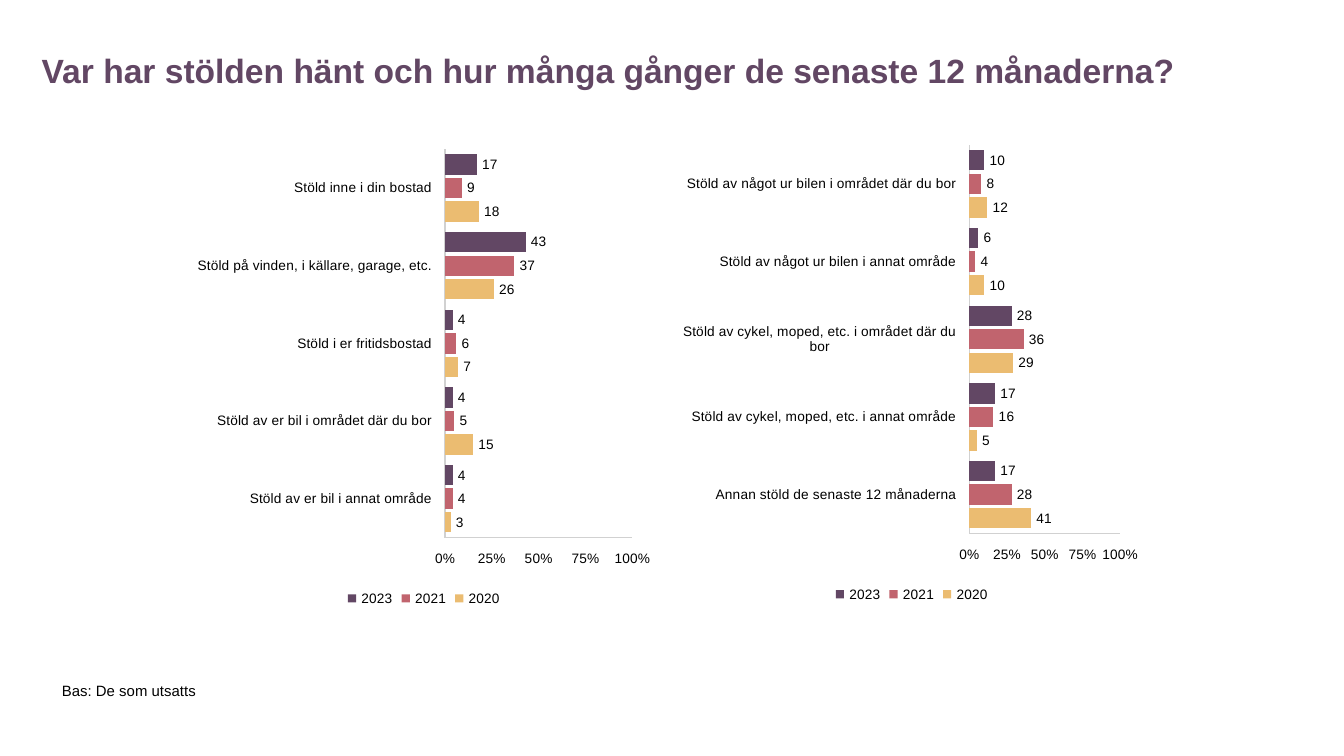
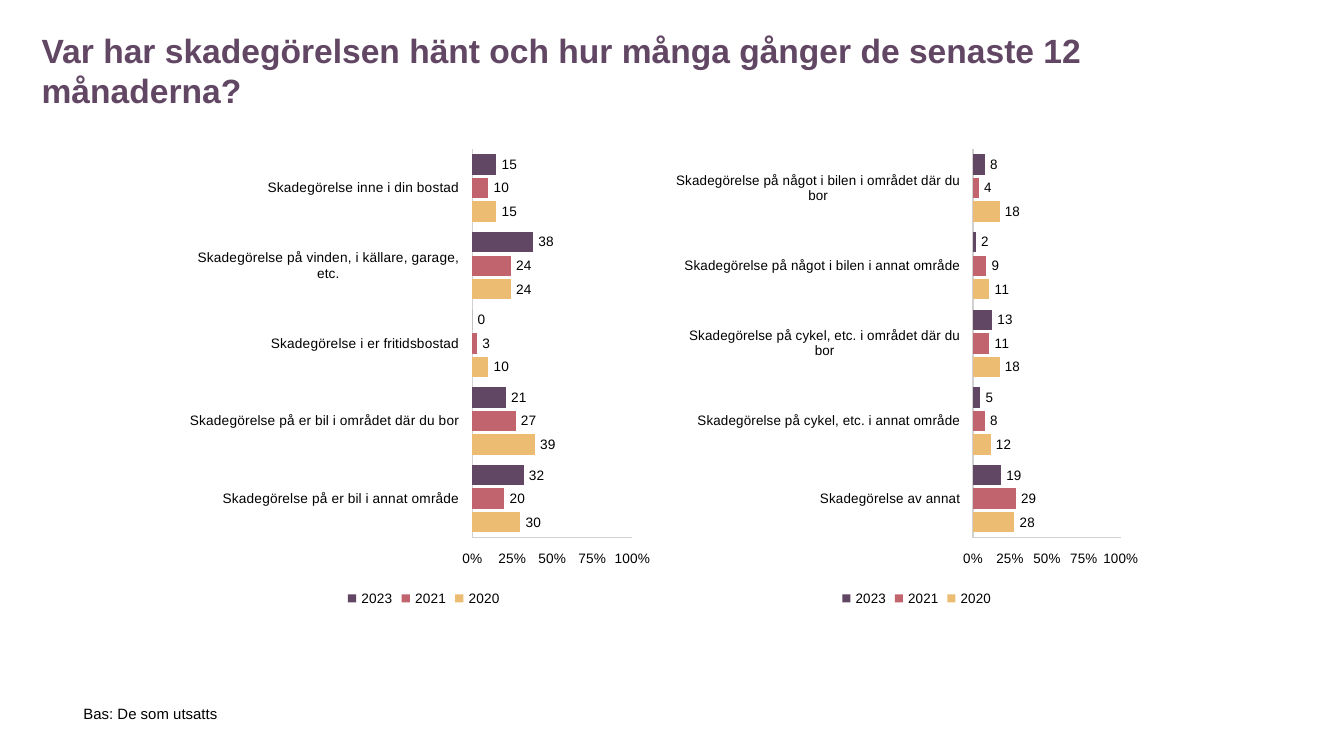
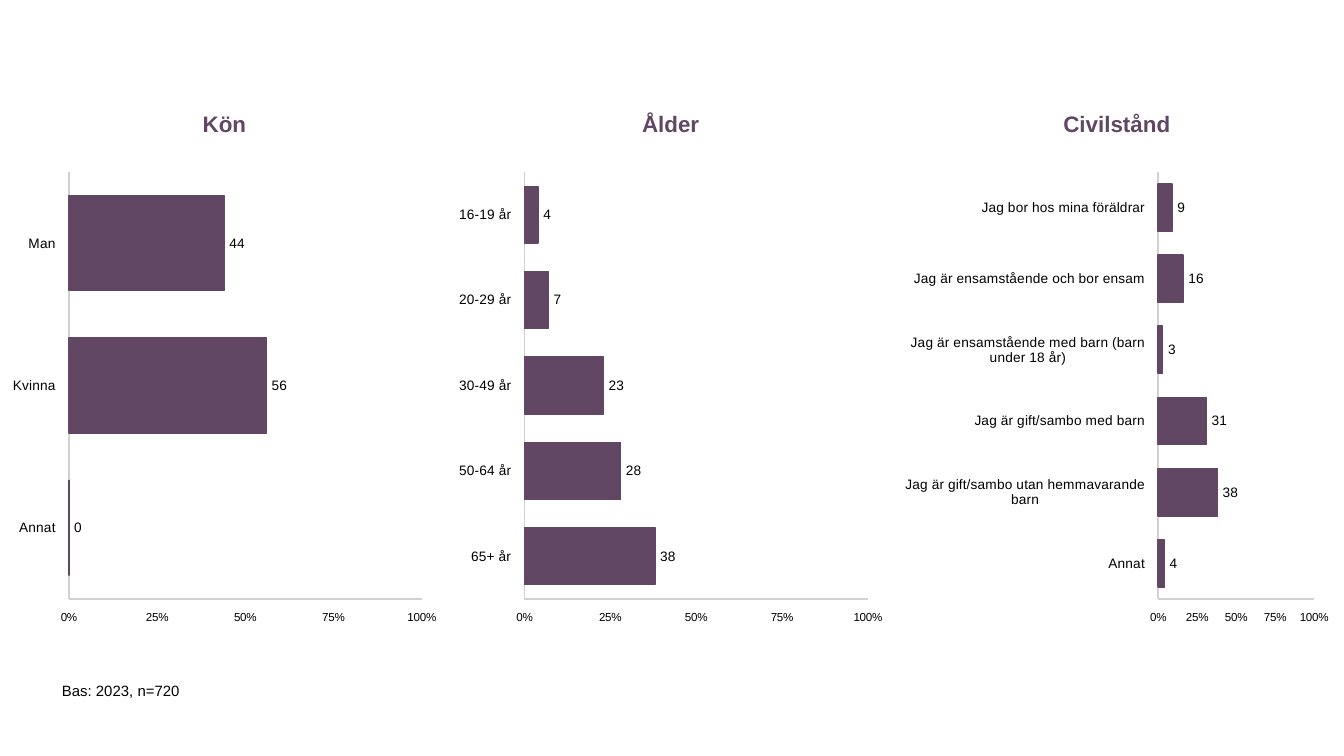
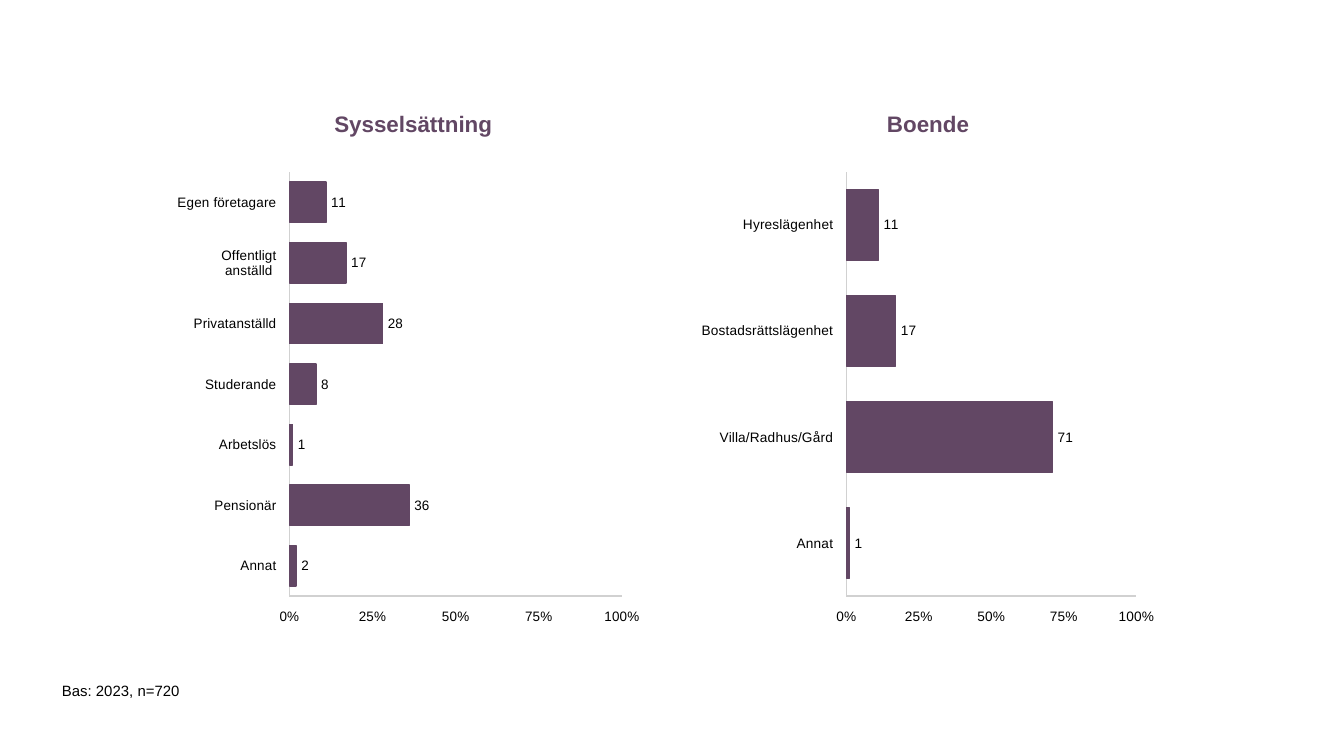
from pptx import Presentation
from pptx.chart.data import CategoryChartData
from pptx.dml.color import RGBColor
from pptx.enum.chart import (XL_CHART_TYPE, XL_LABEL_POSITION, XL_LEGEND_POSITION,
                             XL_TICK_LABEL_POSITION, XL_TICK_MARK)
from pptx.enum.text import MSO_ANCHOR, PP_ALIGN
from pptx.util import Inches, Pt

PLUM = RGBColor(0x62, 0x47, 0x64)
ROSE = RGBColor(0xC1, 0x64, 0x6E)
SAND = RGBColor(0xEB, 0xBC, 0x71)
BLACK = RGBColor(0x00, 0x00, 0x00)
CHARCOAL = RGBColor(0x21, 0x21, 0x21)
AXIS_GREY = RGBColor(0xD1, 0xD1, 0xD1)

FONT = "Arial"
LABEL_SIZE = 7.3
SLIDE_WIDTH = Inches(10)
SLIDE_HEIGHT = SLIDE_WIDTH * 9 // 16
CHART_HEIGHT = 3.51
HEADING_TOP = 0.82
LINE_HEIGHT = 0.19
YEARS = [("2023", PLUM), ("2021", ROSE), ("2020", SAND)]
SINGLE = [("Series 1", PLUM)]

# Rows run from the top of each chart: category, then one value per series.
SLIDES = [
    {
        "title": "Var har stölden hänt och hur många gånger de senaste 12 månaderna?",
        "series": YEARS,
        "left": 1.4, "width": 3.51, "pitch": 3.63, "axis_size": LABEL_SIZE,
        "charts": [
            {"top": 1.04, "rows": [
                ("Stöld inne i din bostad", 17, 9, 18),
                ("Stöld på vinden, i källare, garage, etc.", 43, 37, 26),
                ("Stöld i er fritidsbostad", 4, 6, 7),
                ("Stöld av er bil i området där du bor", 4, 5, 15),
                ("Stöld av er bil i annat område", 4, 4, 3)]},
            {"top": 1.01, "rows": [
                ("Stöld av något ur bilen i området där du bor", 10, 8, 12),
                ("Stöld av något ur bilen i annat område", 6, 4, 10),
                ("Stöld av cykel, moped, etc. i området där du bor", 28, 36, 29),
                ("Stöld av cykel, moped, etc. i annat område", 17, 16, 5),
                ("Annan stöld de senaste 12 månaderna", 17, 28, 41)]},
        ],
        "base": ("Bas: De som utsatts", 0.46, 5.07),
    },
    {
        "title": "Var har skadegörelsen hänt och hur många gånger de senaste 12 månaderna?",
        "series": YEARS,
        "left": 1.4, "width": 3.51, "pitch": 3.63, "axis_size": LABEL_SIZE,
        "charts": [
            {"top": 1.04, "rows": [
                ("Skadegörelse inne i din bostad", 15, 10, 15),
                ("Skadegörelse på vinden, i källare, garage, etc.", 38, 24, 24),
                ("Skadegörelse i er fritidsbostad", 0, 3, 10),
                ("Skadegörelse på er bil i området där du bor", 21, 27, 39),
                ("Skadegörelse på er bil i annat område", 32, 20, 30)]},
            {"top": 1.04, "rows": [
                ("Skadegörelse på något i bilen i området där du bor", 8, 4, 18),
                ("Skadegörelse på något i bilen i annat område", 2, 9, 11),
                ("Skadegörelse på cykel, etc. i området där du bor", 13, 11, 18),
                ("Skadegörelse på cykel, etc. i annat område", 5, 8, 12),
                ("Skadegörelse av annat", 19, 29, 28)]},
        ],
        "base": ("Bas: De som utsatts", 0.62, 5.24),
    },
    {
        "series": SINGLE,
        "left": 0.03, "width": 3.28, "pitch": 3.32, "axis_size": 6.2,
        "charts": [
            {"heading": "Kön", "top": 1.21, "rows": [
                ("Man", 44), ("Kvinna", 56), ("Annat", 0)]},
            {"heading": "Ålder", "top": 1.21, "rows": [
                ("16-19 år", 4), ("20-29 år", 7), ("30-49 år", 23),
                ("50-64 år", 28), ("65+ år", 38)]},
            {"heading": "Civilstånd", "top": 1.21, "rows": [
                ("Jag bor hos mina föräldrar", 9),
                ("Jag är ensamstående och bor ensam", 16),
                ("Jag är ensamstående med barn (barn under 18 år)", 3),
                ("Jag är gift/sambo med barn", 31),
                ("Jag är gift/sambo utan hemmavarande barn", 38),
                ("Annat", 4)]},
        ],
        "base": ("Bas: 2023, n=720", 0.46, 5.07),
    },
    {
        "series": SINGLE,
        "left": 1.32, "width": 3.51, "pitch": 3.83, "axis_size": LABEL_SIZE,
        "charts": [
            {"heading": "Sysselsättning", "top": 1.21, "rows": [
                ("Egen företagare", 11), ("Offentligt anställd", 17),
                ("Privatanställd", 28), ("Studerande", 8), ("Arbetslös", 1),
                ("Pensionär", 36), ("Annat", 2)]},
            {"heading": "Boende", "top": 1.21, "rows": [
                ("Hyreslägenhet", 11), ("Bostadsrättslägenhet", 17),
                ("Villa/Radhus/Gård", 71), ("Annat", 1)]},
        ],
        "base": ("Bas: 2023, n=720", 0.46, 5.07),
    },
]


def style_font(font, size, color, bold=False):
    font.name = FONT
    font.size = Pt(size)
    font.color.rgb = color
    font.bold = bold


def add_text(page, text, place, size, color, bold=False, align=PP_ALIGN.LEFT):
    box = page.shapes.add_textbox(*map(Inches, place))
    frame = box.text_frame
    frame.word_wrap = True
    frame.margin_left = frame.margin_top = frame.margin_right = frame.margin_bottom = 0
    para = frame.paragraphs[0]
    para.text = text
    para.alignment = align
    style_font(para.font, size, color, bold)
    return frame


def add_title(page, text):
    frame = add_text(page, text, (0, 0, 9.25, 1.04), 18, PLUM, bold=True)
    frame.vertical_anchor = MSO_ANCHOR.MIDDLE
    properties = frame.paragraphs[0]._p.get_or_add_pPr()
    properties.set("marL", str(Inches(0.31)))
    properties.set("indent", "0")


def style_axis(axis, size):
    axis.has_major_gridlines = False
    axis.major_tick_mark = axis.minor_tick_mark = XL_TICK_MARK.NONE
    axis.tick_label_position = XL_TICK_LABEL_POSITION.LOW
    axis.format.line.color.rgb = AXIS_GREY
    axis.format.line.width = Pt(0.75)
    style_font(axis.tick_labels.font, size, BLACK)


def add_bar_chart(page, rows, series, place, axis_size):
    """Bar charts fill upwards, so rows and series go in from the last."""
    names, *columns = zip(*reversed(rows))
    several = len(series) > 1
    data = CategoryChartData(number_format="General")
    data.categories = names
    for (name, _), values in reversed(list(zip(series, columns))):
        data.add_series(name, values)
    chart = page.shapes.add_chart(
        XL_CHART_TYPE.BAR_CLUSTERED, *map(Inches, place), data).chart
    chart.has_title = False
    style_font(chart.font, 10, CHARCOAL)

    style_axis(chart.category_axis, LABEL_SIZE)
    scale = chart.value_axis
    style_axis(scale, axis_size)
    scale.minimum_scale, scale.maximum_scale, scale.major_unit = 0, 100, 25
    scale.tick_labels.number_format = r"General\%"
    scale.tick_labels.number_format_is_linked = False

    plot = chart.plots[0]
    plot.gap_width, plot.overlap = 50, -16
    plot.vary_by_categories = False
    for bars, (_, color) in zip(plot.series, reversed(series)):
        bars.format.fill.solid()
        bars.format.fill.fore_color.rgb = color
        bars.invert_if_negative = False
        if not several:
            bars.format.line.color.rgb = color
            bars.format.line.width = Pt(0.75)
    plot.has_data_labels = True
    labels = plot.data_labels
    labels.show_value = True
    labels.position = XL_LABEL_POSITION.OUTSIDE_END
    style_font(labels.font, LABEL_SIZE, BLACK)

    chart.has_legend = several
    if several:
        chart.legend.position = XL_LEGEND_POSITION.BOTTOM
        chart.legend.include_in_layout = False
        style_font(chart.legend.font, LABEL_SIZE, BLACK)


def build_page(page, content):
    if "title" in content:
        add_title(page, content["title"])
    width = content["width"]
    for column, panel in enumerate(content["charts"]):
        left = content["left"] + column * content["pitch"]
        add_bar_chart(page, panel["rows"], content["series"],
                      (left, panel["top"], width, CHART_HEIGHT), content["axis_size"])
        if "heading" in panel:
            add_text(page, panel["heading"], (left, HEADING_TOP, width, LINE_HEIGHT),
                     12, PLUM, bold=True, align=PP_ALIGN.CENTER)
    base, left, top = content["base"]
    add_text(page, base, (left, top, 7.29, LINE_HEIGHT), 8, BLACK)


def main():
    deck = Presentation()
    deck.slide_width, deck.slide_height = SLIDE_WIDTH, SLIDE_HEIGHT
    blank = deck.slide_layouts[6]
    for content in SLIDES:
        build_page(deck.slides.add_slide(blank), content)
    deck.save("out.pptx")


if __name__ == "__main__":
    main()
